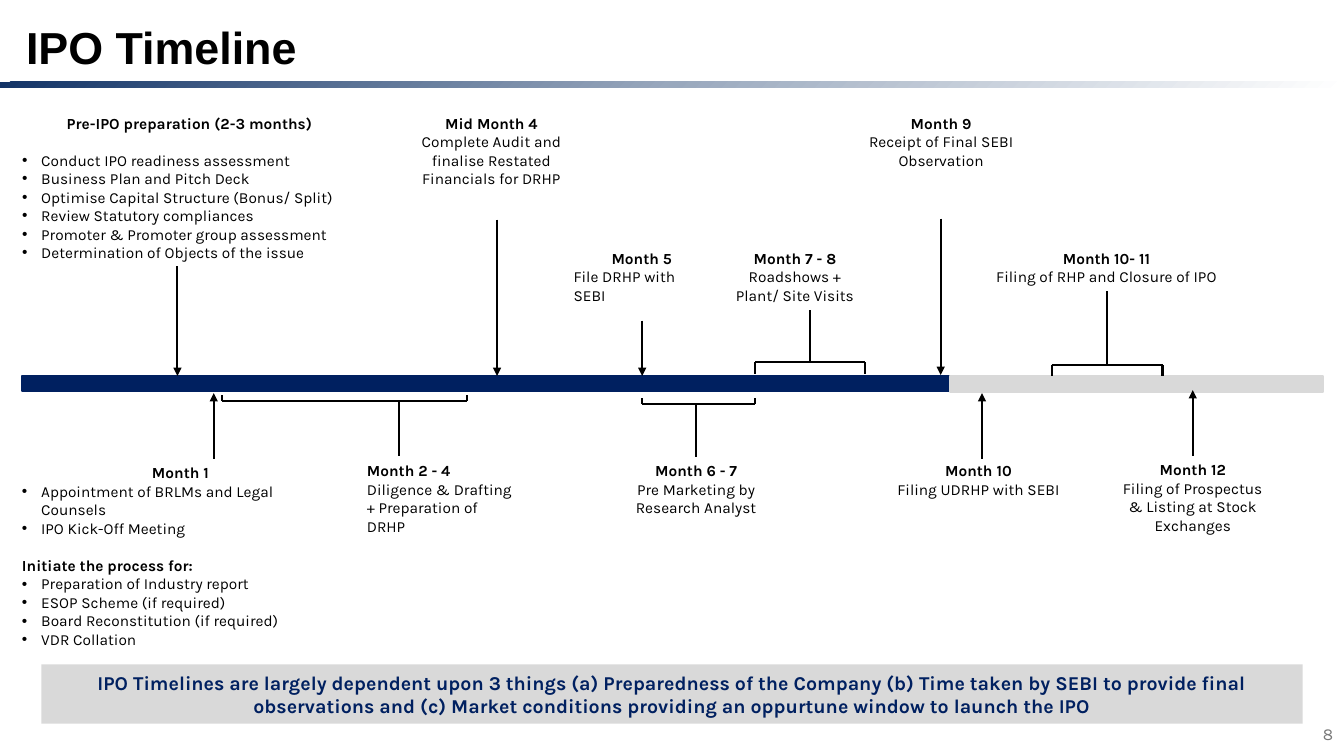
from dataclasses import dataclass

import pptx
import pptx.dml.color
import pptx.enum.dml
import pptx.enum.shapes
import pptx.enum.text
import pptx.oxml
import pptx.oxml.ns
import pptx.util
from pptx.util import Inches

LEFT = pptx.enum.text.PP_ALIGN.LEFT
CENTER = pptx.enum.text.PP_ALIGN.CENTER
RIGHT = pptx.enum.text.PP_ALIGN.RIGHT
MIDDLE = pptx.enum.text.MSO_ANCHOR.MIDDLE
TOP = pptx.enum.text.MSO_ANCHOR.TOP


@dataclass(frozen=True)
class Theme:
    navy: str = "002060"
    grey: str = "D9D9D9"
    black: str = "000000"
    page_grey: str = "797979"
    rule_stops: tuple = ((0, "133467"), (50, "99A8BD"), (100, "FFFFFF"))
    title_font: str = "Arial"
    body_font: str = "Karla"
    title_size: int = 32
    banner_size: int = 14
    page_size: int = 12
    body_size: int = 11
    line_width: float = 1.5
    section_gap: float = 13.2
    indent: float = 0.19


THEME = Theme()

PREPARATION = [
    "Conduct IPO readiness assessment",
    "Business Plan and Pitch Deck",
    "Optimise Capital Structure (Bonus/ Split)",
    "Review Statutory compliances",
    "Promoter & Promoter group assessment",
    "Determination of Objects of the issue",
]
KICK_OFF = ["Appointment of BRLMs and Legal Counsels", "IPO Kick-Off Meeting"]
PROCESSES = [
    "Preparation of Industry report",
    "ESOP Scheme (if required)",
    "Board Reconstitution (if required)",
    "VDR Collation",
]

# heading, detail, box (left, top, width, height), heading and detail alignment
MILESTONES = [
    ("Mid Month 4", "Complete Audit and finalise Restated Financials for DRHP",
     (3.96, 1.08, 1.83, 0.84), CENTER, CENTER),
    ("Month 2 - 4", "Diligence & Drafting + Preparation of DRHP",
     (3.54, 4.53, 1.67, 0.66), LEFT, LEFT),
    ("Month 5", "File DRHP with SEBI", (5.59, 2.42, 1.55, 0.47), CENTER, LEFT),
    ("Month 6 - 7", "Pre Marketing by Research Analyst",
     (5.99, 4.53, 1.83, 0.66), CENTER, CENTER),
    ("Month 7 - 8", "Roadshows + Plant/ Site Visits",
     (7.17, 2.42, 1.43, 0.66), CENTER, CENTER),
    ("Month 9", "Receipt of Final SEBI Observation",
     (8.42, 1.08, 1.83, 0.66), CENTER, CENTER),
    ("Month 10- 11", "Filing of RHP and Closure of IPO",
     (9.77, 2.42, 2.41, 0.47), CENTER, CENTER),
    ("Month 10", "Filing UDRHP with SEBI", (8.79, 4.53, 1.83, 0.47), CENTER, CENTER),
    ("Month 12", "Filing of Prospectus\n& Listing at Stock Exchanges",
     (10.74, 4.52, 2.18, 0.66), CENTER, CENTER),
]

# x, start y, end y
ARROWS = [
    (1.76, 2.64, 3.73), (2.12, 4.55, 3.9), (4.93, 2.18, 3.73), (6.37, 3.18, 3.73),
    (9.33, 2.17, 3.72), (9.74, 4.55, 3.9), (11.83, 4.52, 3.87),
]

# left, right, y at the bar, y of the crosspiece, stem x, stem end y
BRACKETS = [
    (2.2, 4.63, 3.92, 3.98, 3.96, 4.52),
    (6.37, 7.49, 3.95, 4.01, 6.9, 4.53),
    (7.49, 8.58, 3.71, 3.59, 8.03, 3.08),
    (10.43, 11.53, 3.73, 3.62, 10.98, 2.89),
]


def rgb(value):
    return pptx.dml.color.RGBColor.from_string(value)


def add_bullet(paragraph):
    properties = paragraph._p.get_or_add_pPr()
    properties.set("marL", str(Inches(THEME.indent)))
    properties.set("indent", str(-Inches(THEME.indent)))
    for tag, name, value in (("a:buFont", "typeface", "Arial"), ("a:buChar", "char", "•")):
        bullet = pptx.oxml.ns.qn(tag)
        properties.append(properties.makeelement(bullet, {name: value}))


def write_paragraph(frame, text, *, size=THEME.body_size, font=THEME.body_font,
                    color=THEME.black, bold=False, align=LEFT, bullet=False, before=0):
    """Fill the first paragraph if it is still empty, otherwise add one."""
    paragraph = frame.paragraphs[0]
    if paragraph.runs:
        paragraph = frame.add_paragraph()
    paragraph.alignment = align
    if before:
        paragraph.space_before = pptx.util.Pt(before)
    if bullet:
        add_bullet(paragraph)
    for index, line in enumerate(text.split("\n")):
        if index:
            paragraph.add_line_break()
        run = paragraph.add_run()
        run.text = line
        run.font.size = pptx.util.Pt(size)
        run.font.name = font
        run.font.bold = bold
        run.font.color.rgb = rgb(color)


def add_text_box(slide, box, anchor=TOP):
    frame = slide.shapes.add_textbox(*map(Inches, box)).text_frame
    frame.word_wrap = True
    frame.vertical_anchor = anchor
    return frame


def add_bullets(frame, items, before=0):
    for index, item in enumerate(items):
        write_paragraph(frame, item, bullet=True, before=0 if index else before)


def add_rectangle(slide, box, fill, outlined=False):
    kind = pptx.enum.shapes.MSO_SHAPE.RECTANGLE
    shape = slide.shapes.add_shape(kind, *map(Inches, box))
    shape.shadow.inherit = False
    shape.fill.solid()
    shape.fill.fore_color.rgb = rgb(fill)
    if outlined:
        shape.line.color.rgb = rgb(fill)
        shape.line.width = pptx.util.Pt(THEME.line_width)
    else:
        shape.line.fill.background()
    return shape


def add_title_rule(slide):
    rule = add_rectangle(slide, (0, 0.81, 13.33, 0.06), THEME.navy)
    rule.fill.gradient()
    rule.fill.gradient_angle = 315
    stops = rule._element.spPr.find(".//" + pptx.oxml.ns.qn("a:gsLst"))
    for stop in list(stops):
        stops.remove(stop)
    for position, color in THEME.rule_stops:
        stops.append(pptx.oxml.parse_xml(
            f'<a:gs {pptx.oxml.ns.nsdecls("a")} pos="{position * 1000}">'
            f'<a:srgbClr val="{color}"/></a:gs>'))


def add_line(slide, start, end, arrow=False):
    kind = pptx.enum.shapes.MSO_CONNECTOR.STRAIGHT
    connector = slide.shapes.add_connector(kind, *map(Inches, (*start, *end)))
    connector.line.color.rgb = rgb(THEME.black)
    connector.line.width = pptx.util.Pt(THEME.line_width)
    if arrow:
        outline = connector.line._get_or_add_ln()
        tail = pptx.oxml.ns.qn("a:tailEnd")
        outline.append(outline.makeelement(tail, {"type": "triangle"}))
    properties = connector._element.spPr
    properties.append(properties.makeelement(pptx.oxml.ns.qn("a:effectLst"), {}))


def add_bracket(slide, left, right, bar_y, cross_y, stem_x, stem_y):
    add_line(slide, (left, bar_y), (left, cross_y))
    add_line(slide, (left, cross_y), (right, cross_y))
    add_line(slide, (right, bar_y), (right, cross_y))
    add_line(slide, (stem_x, cross_y), (stem_x, stem_y))


def add_milestone(slide, heading, detail, box, heading_align, detail_align):
    frame = add_text_box(slide, box)
    write_paragraph(frame, heading, bold=True, align=heading_align)
    write_paragraph(frame, detail, align=detail_align)


def add_banner(slide):
    frame = add_rectangle(slide, (0.41, 6.59, 12.51, 0.59), THEME.grey).text_frame
    frame.word_wrap = True
    frame.vertical_anchor = MIDDLE
    for line in (
        "IPO Timelines are largely dependent upon 3 things (a) Preparedness of the "
        "Company (b) Time taken by SEBI to provide final",
        "observations and (c) Market conditions providing an oppurtune window to launch the IPO",
    ):
        write_paragraph(frame, line, size=THEME.banner_size, color=THEME.navy,
                        bold=True, align=CENTER)


def main():
    presentation = pptx.Presentation()
    presentation.slide_width = Inches(13.33)
    presentation.slide_height = Inches(7.5)
    slide = presentation.slides.add_slide(presentation.slide_layouts[6])

    add_rectangle(slide, (0.22, 3.73, 12.47, 0.15), THEME.navy, outlined=True)
    add_rectangle(slide, (9.42, 3.73, 3.7, 0.16), THEME.grey, outlined=True)
    for x, start_y, end_y in ARROWS:
        add_line(slide, (x, start_y), (x, end_y), arrow=True)
    for bracket in BRACKETS:
        add_bracket(slide, *bracket)

    preparation = add_text_box(slide, (0.12, 1.08, 3.52, 1.58))
    write_paragraph(preparation, "Pre-IPO preparation (2-3 months)", bold=True, align=CENTER)
    add_bullets(preparation, PREPARATION, before=THEME.section_gap)
    kick_off = add_text_box(slide, (0.12, 4.55, 3.34, 1.77))
    write_paragraph(kick_off, "Month 1", bold=True, align=CENTER)
    add_bullets(kick_off, KICK_OFF)
    write_paragraph(kick_off, "Initiate the process for:", bold=True, before=THEME.section_gap)
    add_bullets(kick_off, PROCESSES)
    for milestone in MILESTONES:
        add_milestone(slide, *milestone)

    add_banner(slide)
    write_paragraph(add_text_box(slide, (0.16, 0, 13.17, 0.92), MIDDLE), "IPO Timeline",
                    size=THEME.title_size, font=THEME.title_font, bold=True)
    write_paragraph(add_text_box(slide, (10.32, 7.08, 3, 0.4), MIDDLE), "8",
                    size=THEME.page_size, color=THEME.page_grey, align=RIGHT)
    add_title_rule(slide)
    presentation.save("out.pptx")


if __name__ == "__main__":
    main()
